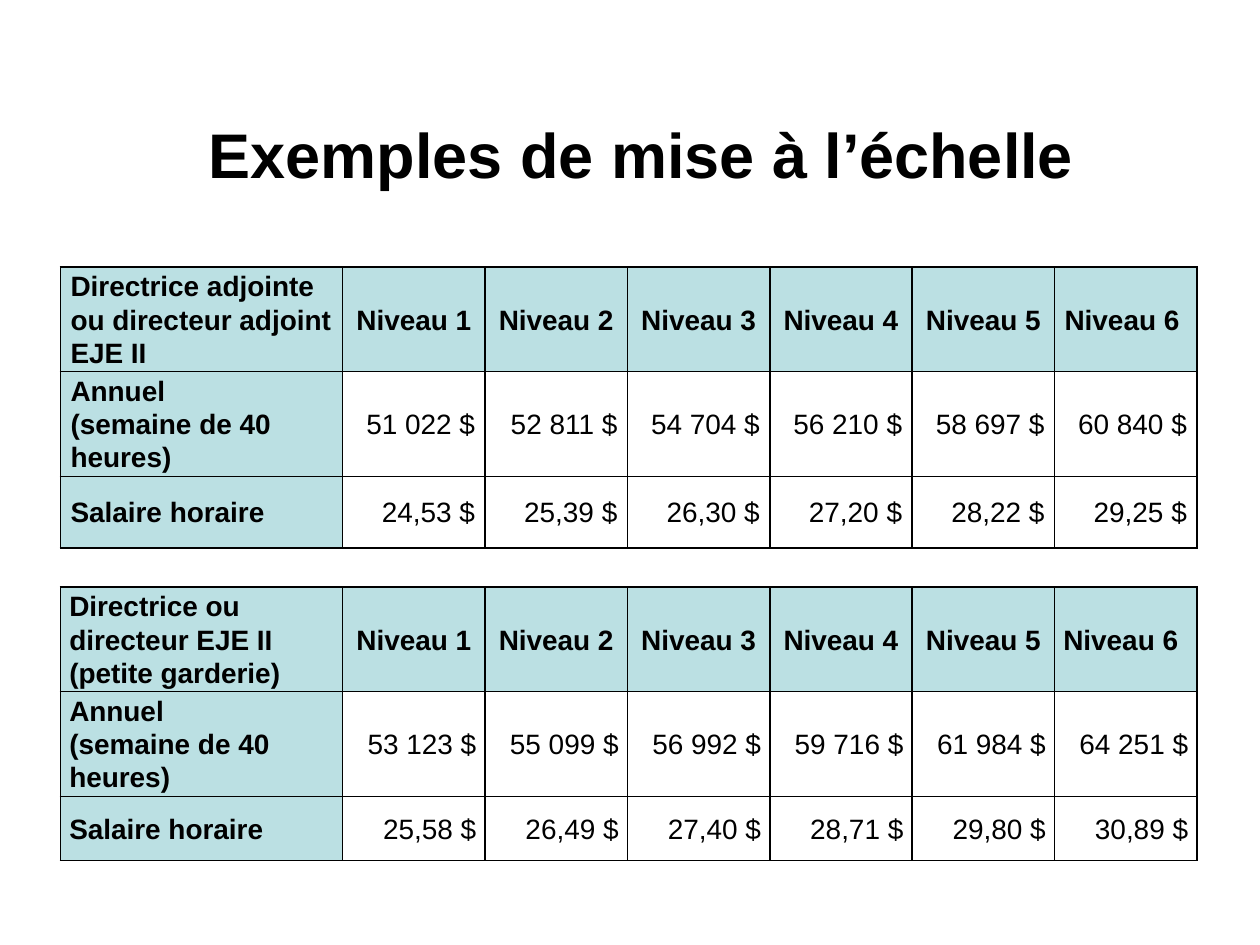
from lxml import etree
from pptx import Presentation
from pptx.dml.color import RGBColor
from pptx.enum.text import MSO_ANCHOR, PP_ALIGN
from pptx.oxml.ns import qn
from pptx.util import Inches, Pt

FONT = "Arial"
BLACK, WHITE, TEAL = "000000", "FFFFFF", "BBE0E3"
LEVELS = [f"Niveau {n}" for n in range(1, 7)]
ANNUAL = "Annuel\n(semaine de 40 heures)"
HOURLY = "Salaire horaire"

ASSISTANT_ROWS = [
    ["Directrice adjointe ou directeur adjoint EJE II", *LEVELS],
    [ANNUAL, "51 022 $", "52 811 $", "54 704 $", "56 210 $", "58 697 $", "60 840 $"],
    [HOURLY, "24,53 $", "25,39 $", "26,30 $", "27,20 $", "28,22 $", "29,25 $"],
]
DIRECTOR_ROWS = [
    ["Directrice ou directeur EJE II (petite garderie)", *LEVELS],
    [ANNUAL, "53 123 $", "55 099 $", "56 992 $", "59 716 $", "61 984 $", "64 251 $"],
    [HOURLY, "25,58 $", "26,49 $", "27,40 $", "28,71 $", "29,80 $", "30,89 $"],
]


def rgb(value):
    return RGBColor.from_string(value)


def add_run(p, text, size, bold):
    r = p.add_run()
    r.text = text
    r.font.name = FONT
    r.font.size = Pt(size)
    r.font.bold = bold
    r.font.color.rgb = rgb(BLACK)


def set_title(s, text):
    sp = s.shapes.title
    sp.left, sp.top, sp.width, sp.height = map(Inches, (0.7, 0.8, 8.78, 0.83))
    tf = sp.text_frame
    tf.vertical_anchor = MSO_ANCHOR.MIDDLE
    p = tf.paragraphs[0]
    p.alignment = PP_ALIGN.CENTER
    add_run(p, text, 36, True)


def set_borders(cell):
    tc_pr = cell._tc.get_or_add_tcPr()
    # Borders come before the fill in the cell properties
    for i, side in enumerate(("lnL", "lnR", "lnT", "lnB")):
        ln = etree.Element(qn(f"a:{side}"), w=str(Pt(1)))
        fill = etree.SubElement(ln, qn("a:solidFill"))
        etree.SubElement(fill, qn("a:srgbClr"), val=BLACK)
        tc_pr.insert(i, ln)


def fill_cell(cell, text, align, heading, inset):
    cell.fill.solid()
    cell.fill.fore_color.rgb = rgb(TEAL if heading else WHITE)
    set_borders(cell)
    cell.vertical_anchor = MSO_ANCHOR.MIDDLE
    cell.margin_left = cell.margin_right = Inches(inset)
    cell.margin_top = cell.margin_bottom = 0
    tf = cell.text_frame
    for i, line in enumerate(text.split("\n")):
        p = tf.add_paragraph() if i else tf.paragraphs[0]
        p.alignment = align
        p.line_spacing = 1.07
        add_run(p, line, 16, heading)


def add_salary_table(s, rows, top, last_height, inset):
    heights = [0.83, 0.83, last_height]
    widths = [2.24] + [1.13] * len(LEVELS)
    table = s.shapes.add_table(
        len(rows), len(widths), Inches(0.48), Inches(top),
        Inches(sum(widths)), Inches(sum(heights))).table
    table.first_row = table.horz_banding = False
    for column, width in zip(table.columns, widths):
        column.width = Inches(width)
    for row, height in zip(table.rows, heights):
        row.height = Inches(height)
    for i, row in enumerate(rows):
        for j, text in enumerate(row):
            if j == 0 or (i == 0 and j == len(LEVELS)):
                align = PP_ALIGN.LEFT
            else:
                align = PP_ALIGN.RIGHT if i else PP_ALIGN.CENTER
            fill_cell(table.cell(i, j), text, align, i == 0 or j == 0, inset)


def main():
    prs = Presentation()
    prs.slide_width, prs.slide_height = Inches(10), Inches(7.5)
    s = prs.slides.add_slide(prs.slide_layouts[5])

    # Title
    set_title(s, "Exemples de mise à l’échelle")

    # Salary scales
    add_salary_table(s, ASSISTANT_ROWS, 2.12, 0.57, 0.08)
    add_salary_table(s, DIRECTOR_ROWS, 4.66, 0.51, 0.07)

    prs.save("out.pptx")


if __name__ == "__main__":
    main()
